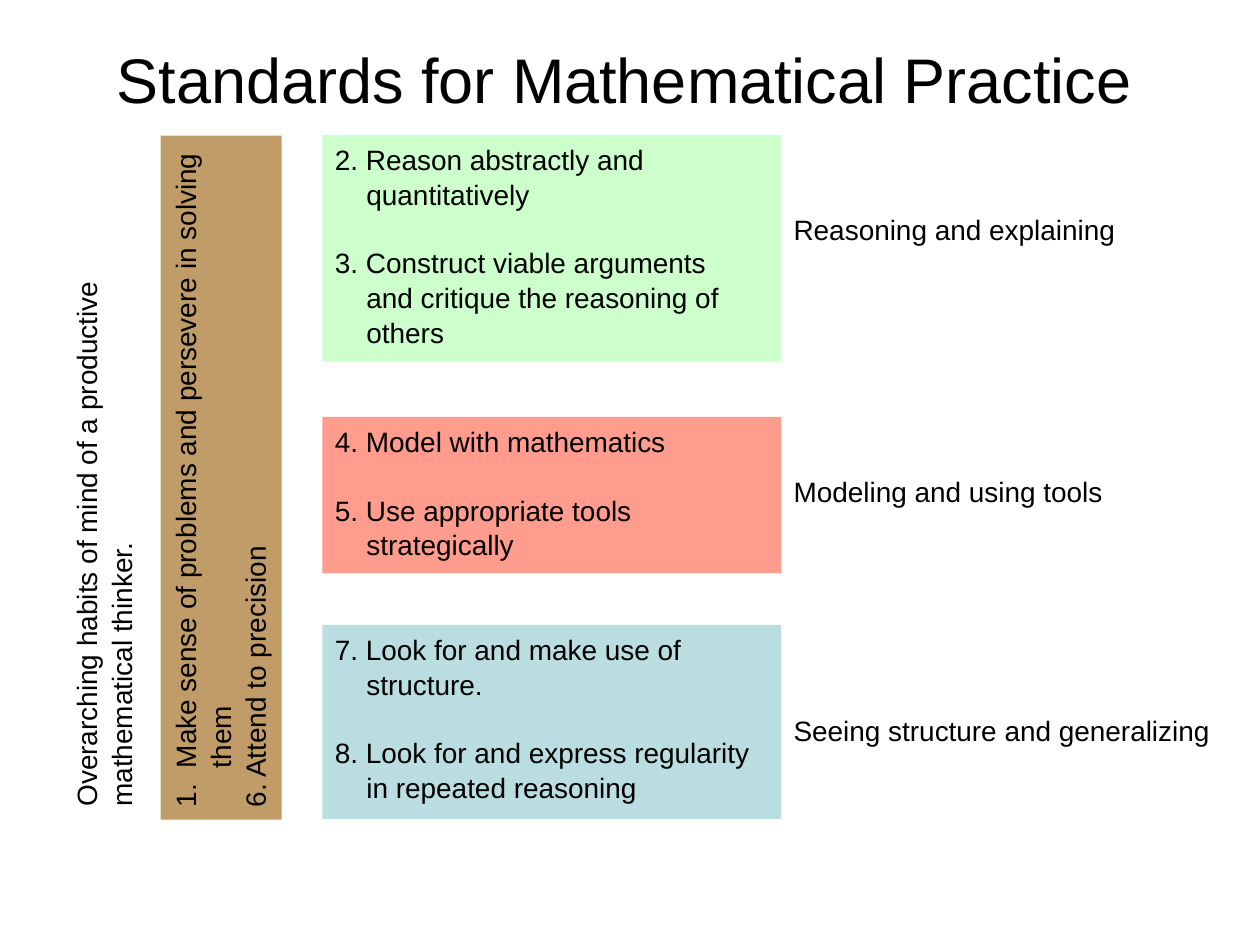
from pptx import Presentation
from pptx.dml.color import RGBColor
from pptx.enum.shapes import MSO_SHAPE
from pptx.enum.text import MSO_ANCHOR, MSO_AUTO_SIZE, PP_ALIGN
from pptx.oxml.ns import qn
from pptx.util import Inches, Pt
from lxml.etree import SubElement

INK = {"text": "000000", "green": "CCFFCC", "red": "FF9C8D",
       "blue": "BADDE1", "tan": "C09C69"}
LEFT, WIDE, EDGE = 2.56, 3.64, 6.2
GROUPS = [
    (1.07, 1.8, "green", 1.63, 2.78, "Reasoning and explaining",
     ["2. Reason abstractly and quantitatively", "3. Construct viable arguments",
      "and critique the reasoning of", "others"]),
    (3.31, 1.24, "red", 3.71, 2.68, "Modeling and using tools",
     ["4. Model with mathematics", "5. Use appropriate tools", "strategically"]),
    (4.96, 1.54, "blue", 5.6, 3.55, "Seeing structure and generalizing",
     ["7. Look for and make use of", "structure.",
      "8. Look for and express regularity", "in repeated reasoning"]),
]


def write(frame, lines, size=16, align=PP_ALIGN.LEFT, hang=0, auto=False, wrap=True):
    """Fill a text frame, hanging the numbered lines and spacing them apart."""
    frame.word_wrap = wrap
    frame.auto_size = MSO_AUTO_SIZE.NONE
    frame.vertical_anchor = MSO_ANCHOR.TOP
    for row, line in enumerate(lines):
        para = frame.paragraphs[0] if row == 0 else frame.add_paragraph()
        para.text = line
        para.alignment = align
        para.line_spacing = 1.04
        para.space_before = Pt(0)
        props = para._p.get_or_add_pPr()
        first = auto and row == 0
        if first:
            SubElement(props, qn("a:buFont"), typeface="+mj-lt")
            SubElement(props, qn("a:buAutoNum"), type="arabicPeriod")
        if first or (hang and not auto):
            step = Inches(hang)
            lead = first or line[0].isdigit()
            props.set("marL", str(step))
            props.set("indent", str(-step if lead else 0))
            if lead and row:
                para.space_before = Pt(19.2)
        para.font.size = Pt(size)
        para.font.name = "Arial"
        para.font.color.rgb = RGBColor.from_string(INK["text"])


def panel(slide, spot, hue, lines, turn=0, **style):
    """Add a filled box with text."""
    box = slide.shapes.add_shape(MSO_SHAPE.RECTANGLE, *map(Inches, spot))
    box.shadow.inherit = False
    box.fill.solid()
    box.fill.fore_color.rgb = RGBColor.from_string(INK[hue])
    box.line.fill.background()
    box.rotation = turn
    write(box.text_frame, lines, **style)


def label(slide, spot, lines, turn=0, **style):
    """Add plain text."""
    box = slide.shapes.add_textbox(*map(Inches, spot))
    box.rotation = turn
    write(box.text_frame, lines, **style)


def title(slide, spot, text):
    """Place and format the title."""
    head = slide.shapes.title
    head.left, head.top, head.width, head.height = map(Inches, spot)
    write(head.text_frame, [text], size=36, align=PP_ALIGN.CENTER)


def main():
    """Build the slide."""
    deck = Presentation()
    deck.slide_width, deck.slide_height = Inches(10), Inches(7.5)
    slide = deck.slides.add_slide(deck.slide_layouts[5])
    title(slide, (0.42, 0.25, 9.07, 0.56), "Standards for Mathematical Practice")
    panel(slide, (-0.96, 3.31, 5.43, 0.96), "tan",
          ["Make sense of problems and persevere in solving them",
           "6. Attend to precision"], turn=270, hang=0.31, auto=True)
    label(slide, (-2.12, 3.25, 5.86, 0.64),
          ["Overarching habits of mind of a productive", "mathematical thinker."], turn=270)
    for top, high, hue, mid, span, name, lines in GROUPS:
        panel(slide, (LEFT, top, WIDE, high), hue, lines, hang=0.25)
        label(slide, (EDGE, mid, span, 0.37), [name], wrap=False)
    deck.save("out.pptx")


if __name__ == "__main__":
    main()
